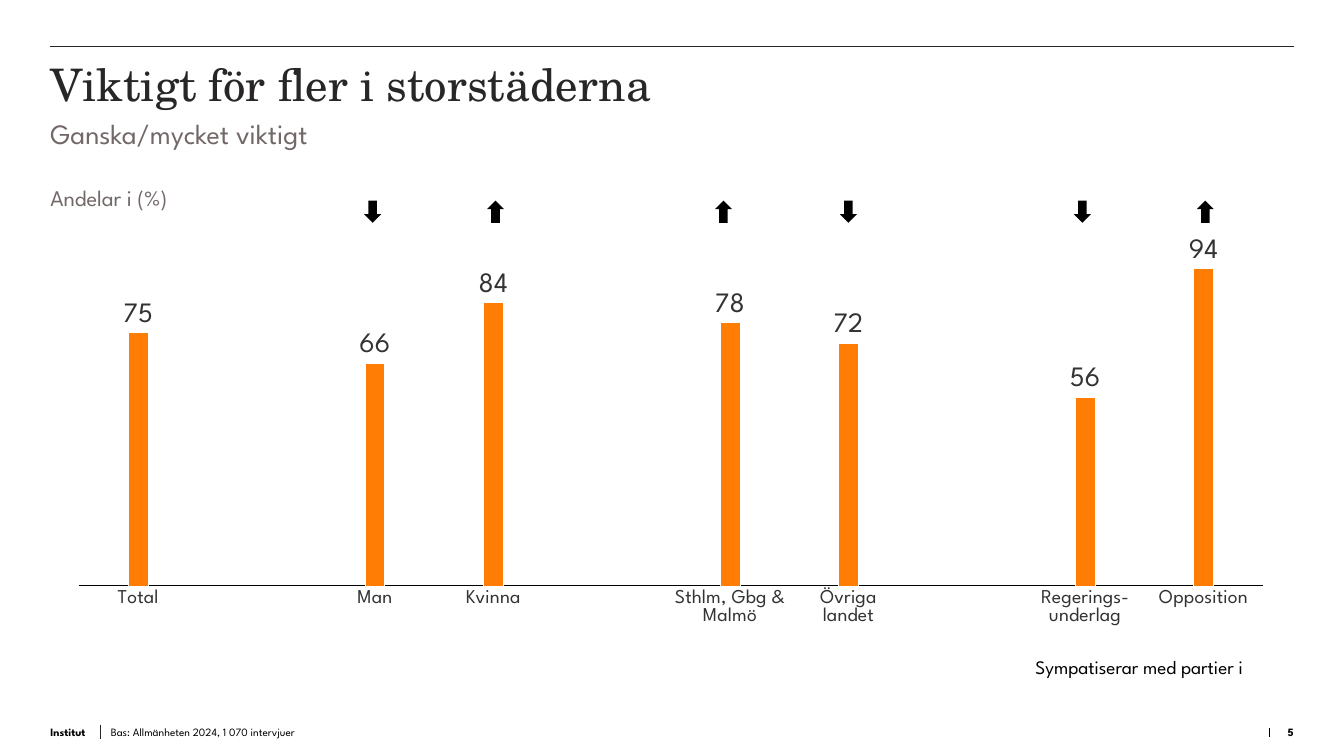
from lxml import etree
from pptx import Presentation
from pptx import util as u
from pptx.chart.data import CategoryChartData
from pptx.dml.color import RGBColor
from pptx.enum import chart as ch, shapes, text
from pptx.oxml import parse_xml
from pptx.oxml.ns import nsdecls, qn

BLACK = RGBColor(0x00, 0x00, 0x00)
WHITE = RGBColor(0xFF, 0xFF, 0xFF)
INK = RGBColor(0x28, 0x26, 0x26)
GREY = RGBColor(0x73, 0x68, 0x68)
LABEL = RGBColor(0x33, 0x33, 0x33)
ORANGE = RGBColor(0xFF, 0x7D, 0x04)
SANS, SERIF = "League Spartan", "TeX Gyre Schola"
EMU_PER_PX = 9144  # 100 px to the inch


def px(n):
    return u.Emu(n * EMU_PER_PX)


class Deck:
    def __init__(self, width, height):
        self.prs = Presentation()
        self.prs.slide_width, self.prs.slide_height = px(width), px(height)
        self.s = self.prs.slides.add_slide(self.prs.slide_layouts[6])

    def line(self, x1, y1, x2, y2, color):
        c = self.s.shapes.add_connector(
            shapes.MSO_CONNECTOR.STRAIGHT, px(x1), px(y1), px(x2), px(y2))
        c.line.color.rgb, c.line.width = color, u.Pt(0.5)
        etree.SubElement(c._element.spPr, qn("a:effectLst"))

    def text(self, x, y, w, h, words, size, color=BLACK, font=SANS, bold=False,
             top=0, bottom=False, right=False):
        tf = self.s.shapes.add_textbox(px(x), px(y), px(w), px(h)).text_frame
        tf.word_wrap = True
        tf.margin_left = tf.margin_right = tf.margin_bottom = 0
        tf.margin_top = px(top)
        tf.vertical_anchor = text.MSO_ANCHOR.BOTTOM if bottom else text.MSO_ANCHOR.TOP
        p = tf.paragraphs[0]
        p.text = words
        p.alignment = text.PP_ALIGN.RIGHT if right else text.PP_ALIGN.LEFT
        f = p.font
        f.name, f.size, f.bold, f.color.rgb = font, u.Pt(size), bold, color

    def arrow(self, x, y, up):
        sp = self.s.shapes.add_shape(
            shapes.MSO_SHAPE.UP_ARROW, px(x), px(y), px(17), px(22))
        sp.rotation = 0 if up else 180
        sp.shadow.inherit = False
        sp.fill.solid()
        sp.fill.fore_color.rgb = BLACK
        sp.line.fill.background()

    def columns(self, x, y, w, h, cats, values, inner):
        data = CategoryChartData()
        data.categories = cats
        data.add_series("Andel", values)
        chart = self.s.shapes.add_chart(
            ch.XL_CHART_TYPE.COLUMN_CLUSTERED, px(x), px(y), px(w), px(h), data).chart
        chart.has_legend = chart.has_title = False
        f = chart.font
        f.name, f.size, f.color.rgb = SANS, u.Pt(14), LABEL

        # Axes
        axis = chart.category_axis
        axis.major_tick_mark = ch.XL_TICK_MARK.NONE
        axis.format.line.color.rgb, axis.format.line.width = BLACK, u.Pt(0.75)
        scale = chart.value_axis
        scale.visible = scale.has_major_gridlines = False
        scale.minimum_scale, scale.maximum_scale = 0, 100

        # Bars and their values
        plot = chart.plots[0]
        plot.gap_width, plot.overlap, plot.vary_by_categories = 500, -100, False
        bars = plot.series[0].format
        bars.fill.solid()
        bars.fill.fore_color.rgb = ORANGE
        bars.line.color.rgb, bars.line.width = WHITE, u.Pt(0.5)
        plot.has_data_labels = True
        labels = plot.data_labels
        labels.show_value = True
        labels.position = ch.XL_LABEL_POSITION.OUTSIDE_END
        f = labels.font
        f.name, f.size, f.color.rgb = SANS, u.Pt(20), LABEL

        # Fixed plot area
        parts = '<c:layoutTarget val="inner"/><c:xMode val="edge"/><c:yMode val="edge"/>'
        parts += "".join(f'<c:{k} val="{v}"/>' for k, v in zip("xywh", inner))
        area = chart._chartSpace.chart.plotArea
        for old in area.findall(qn("c:layout")):
            area.remove(old)
        area.insert(0, parse_xml(
            f'<c:layout {nsdecls("c")}><c:manualLayout>{parts}</c:manualLayout></c:layout>'))


def main():
    d = Deck(1333, 750)

    # Rules and footer
    d.line(50, 46, 1283, 46, INK)
    d.line(100, 719, 100, 733, INK)
    d.line(1259, 722, 1259, 731, BLACK)
    d.text(50, 716, 50, 17, "Institut", 8, bold=True, bottom=True)
    d.text(110, 716, 780, 17, "Bas: Allmänheten 2024, 1 070 intervjuer", 8, bottom=True)
    d.text(1259, 716, 24, 17, "5", 8, bold=True, bottom=True, right=True)

    # Headings
    d.text(50, 46, 1232, 71, "Viktigt för fler i storstäderna", 32, INK, SERIF, top=10)
    d.text(50, 116, 840, 46, "Ganska/mycket viktigt", 20, GREY)

    # Chart: an empty category separates the groups
    bars = [("Total", 75), ("", None), ("Man", 66), ("Kvinna", 84), ("", None),
            ("Sthlm, Gbg & Malmö", 78), ("Övriga\nlandet", 72), ("", None),
            ("Regerings-\nunderlag", 56), ("Opposition", 94)]
    cats, values = zip(*bars)
    d.columns(50, 181, 1232, 520, cats, values, (0.023, 0.126, 0.953, 0.644))
    d.text(50, 183, 840, 46, "Andelar i (%)", 16, GREY)
    d.text(1027, 650, 260, 34, "Sympatiserar med partier i", 13.6)

    # Arrows for shares above or below the total
    for x, up in [(361, False), (483, True), (709, True),
                  (833, False), (1065, False), (1187, True)]:
        d.arrow(x, 199, up)

    d.prs.save("out.pptx")


if __name__ == "__main__":
    main()
